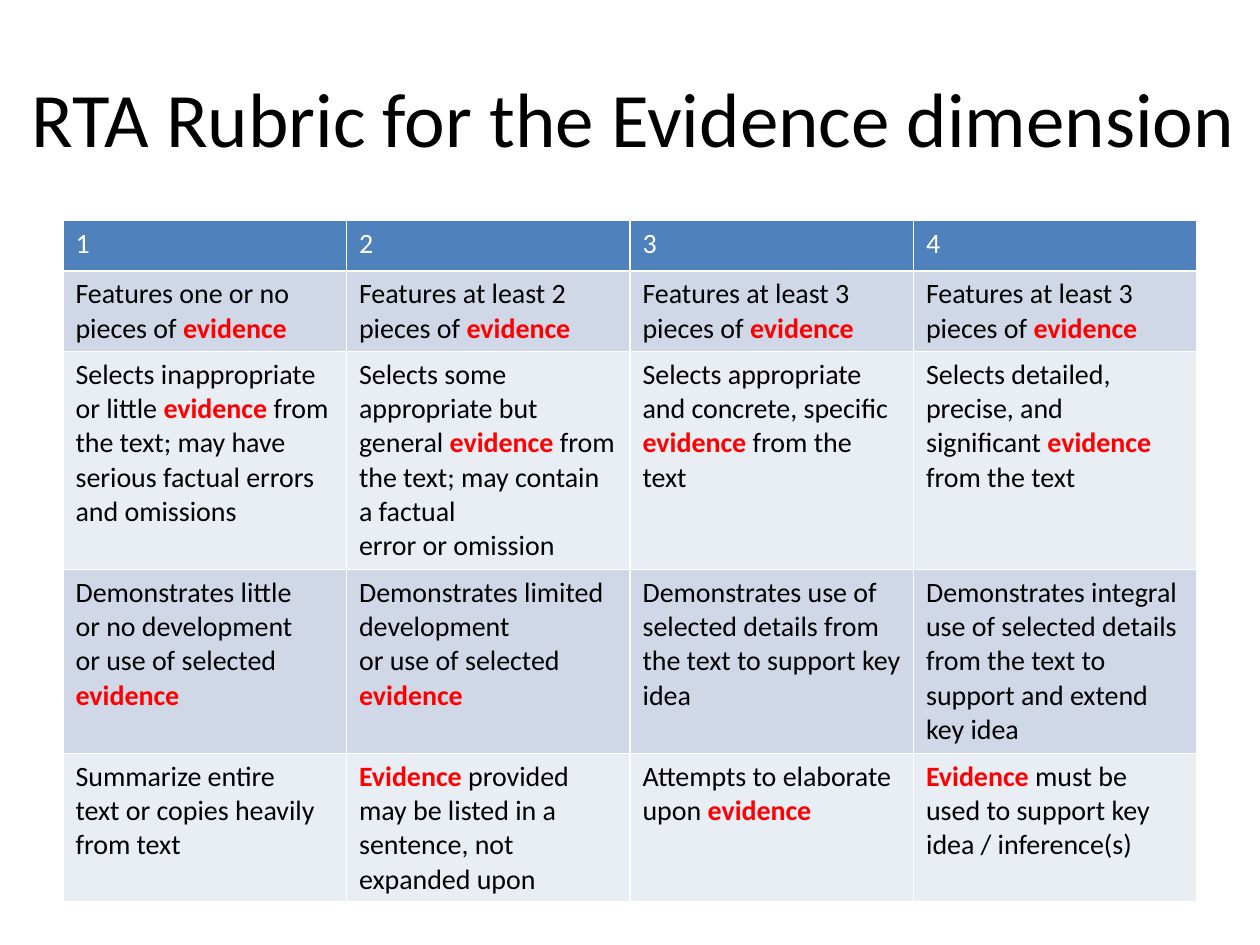
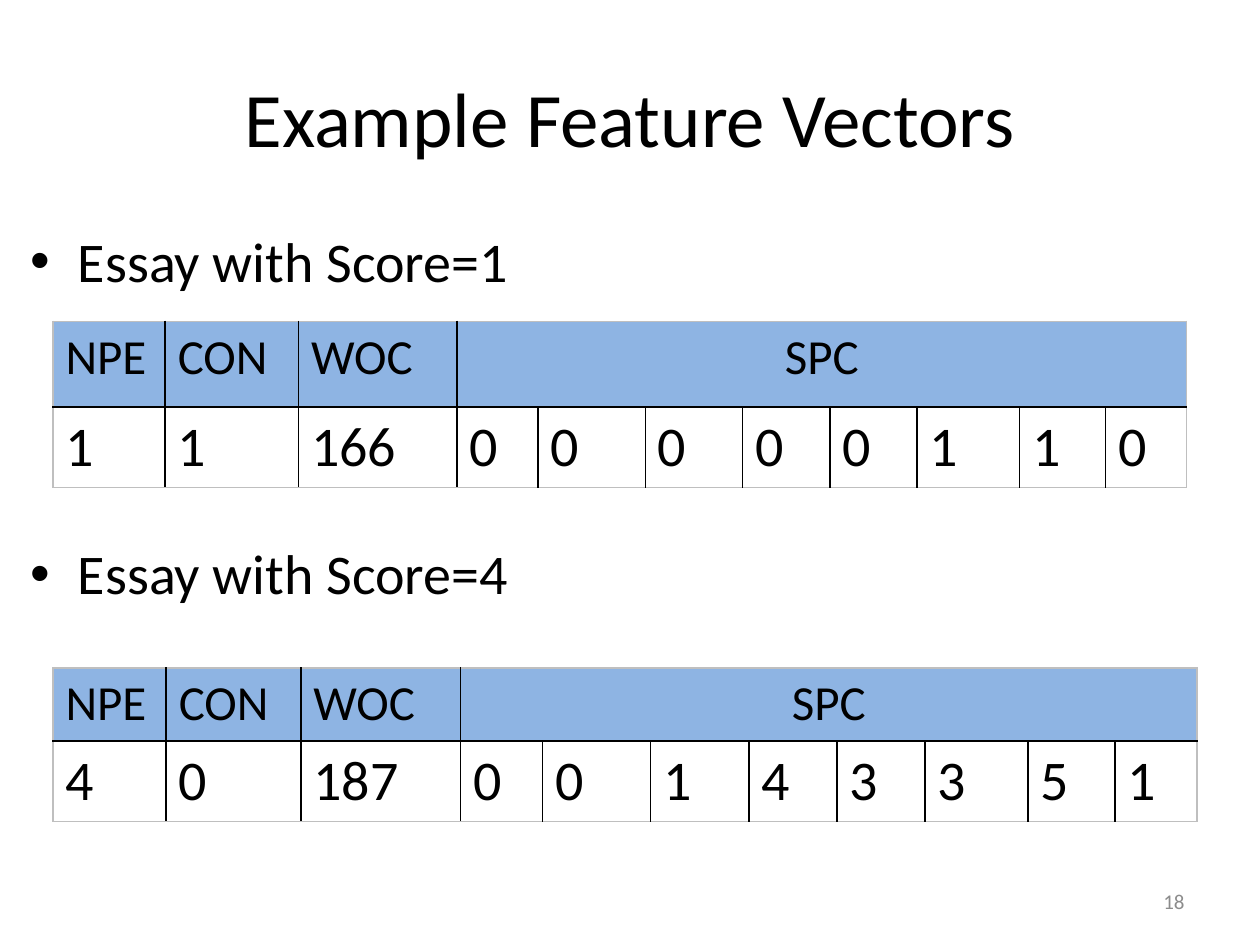
from dataclasses import dataclass

from lxml.etree import SubElement
from pptx import Presentation
from pptx.dml.color import RGBColor
from pptx.enum.text import MSO_ANCHOR, PP_ALIGN
from pptx.oxml.ns import qn
from pptx.util import Emu, Inches, Pt

SLIDE_WIDTH, SLIDE_HEIGHT = Inches(10), Inches(7.5)
GRID_COLUMNS, GRID_ROWS = 100, 75
FONT = "Calibri"
COLORS = {
    "text": "000000",
    "highlight": "FF0000",
    "footer": "8C8C8C",
    "white": "FFFFFF",
    "rubric_header": "4F81BD",
    "band_dark": "D0D8E8",
    "band_light": "E9EDF4",
    "feature_header": "8EB4E3",
    "rule": "000000",
    "frame": "BFBFBF",
}


@dataclass(frozen=True)
class Area:
    """A rectangle in grid columns and rows."""
    left: float
    top: float
    width: float
    height: float


@dataclass(frozen=True)
class TextStyle:
    size: float
    color: str = "text"
    align: PP_ALIGN = PP_ALIGN.LEFT


@dataclass(frozen=True)
class Essay:
    score: int
    area: Area
    row_heights: tuple[float, float]
    features: tuple[int, ...]


TITLE = TextStyle(44, align=PP_ALIGN.CENTER)
BULLET = TextStyle(32)
PAGE_NUMBER = TextStyle(12, "footer", PP_ALIGN.RIGHT)
RUBRIC_HEADER = TextStyle(16, "white")
RUBRIC_BODY = TextStyle(16)
FEATURE_HEADER = TextStyle(28)
FEATURE_GROUP = TextStyle(28, align=PP_ALIGN.CENTER)
FEATURE_VALUE = TextStyle(32)

# Words between asterisks are highlighted.
RUBRIC = (
    ("1", "2", "3", "4"),
    (
        "Features one or no\npieces of *evidence*",
        "Features at least 2\npieces of *evidence*",
        "Features at least 3\npieces of *evidence*",
        "Features at least 3\npieces of *evidence*",
    ),
    (
        "Selects inappropriate or little *evidence* from the text; "
        "may have serious factual errors and omissions",
        "Selects some appropriate but general *evidence* from the text; "
        "may contain a factual\nerror or omission",
        "Selects appropriate\nand concrete, specific *evidence* from the\ntext",
        "Selects detailed, precise, and significant *evidence* from the text",
    ),
    (
        "Demonstrates little\nor no development\nor use of selected\n*evidence*",
        "Demonstrates limited development\nor use of selected\n*evidence*",
        "Demonstrates use of selected details from the text to support key idea",
        "Demonstrates integral use of selected details from the text "
        "to support and extend key idea",
    ),
    (
        "Summarize entire\ntext or copies heavily from text",
        "*Evidence *provided may be listed in a sentence, not expanded upon",
        "Attempts to elaborate upon *evidence*",
        "*Evidence* must be\nused to support key\nidea / inference(s)",
    ),
)
RUBRIC_AREA = Area(5, 17.5, 90, 54.1)
RUBRIC_ROW_HEIGHTS = (4, 6.4, 17.3, 14.6, 11.8)

FEATURE_NAMES = ("NPE", "CON", "WOC", "SPC")
FEATURE_WIDTHS = (9, 10.7, 12.7, 6.5, 8.6, 7.8, 7, 7, 8.2, 6.9, 6.5)
ESSAYS = (
    Essay(1, Area(4.2, 25.5, 90, 13.2), (6.8, 6.4),
          (1, 1, 166, 0, 0, 0, 0, 0, 1, 1, 0)),
    Essay(4, Area(4.2, 53, 90.8, 12.2), (5.8, 6.4),
          (4, 0, 187, 0, 0, 1, 4, 3, 3, 5, 1)),
)


def across(columns: float) -> Emu:
    return Emu(round(SLIDE_WIDTH * columns / GRID_COLUMNS))


def down(rows: float) -> Emu:
    return Emu(round(SLIDE_HEIGHT * rows / GRID_ROWS))


def place(area: Area) -> tuple[Emu, Emu, Emu, Emu]:
    return across(area.left), down(area.top), across(area.width), down(area.height)


def rgb(name: str) -> RGBColor:
    return RGBColor.from_string(COLORS[name])


def write(frame, text: str, style: TextStyle) -> None:
    """Fill a text frame, one paragraph a line, with *marked* words highlighted."""
    frame.text = text.replace("*", "")
    for paragraph, line in zip(frame.paragraphs, text.split("\n")):
        paragraph.alignment = style.align
        paragraph.text = ""
        for index, part in enumerate(line.split("*")):
            if not part:
                continue
            marked = index % 2 == 1
            run = paragraph.add_run()
            run.text = part
            run.font.name = FONT
            run.font.size = Pt(style.size)
            run.font.bold = marked
            run.font.color.rgb = rgb("highlight" if marked else style.color)


def add_text(slide, area: Area, text: str, style: TextStyle,
             anchor: MSO_ANCHOR = MSO_ANCHOR.MIDDLE):
    frame = slide.shapes.add_textbox(*place(area)).text_frame
    frame.word_wrap = True
    frame.vertical_anchor = anchor
    write(frame, text, style)
    return frame


def add_bullet(paragraph) -> None:
    properties = paragraph._p.get_or_add_pPr()
    properties.set("marL", str(Inches(0.38)))
    properties.set("indent", str(-Inches(0.38)))
    SubElement(properties, qn("a:buFont"), typeface="Arial")
    SubElement(properties, qn("a:buChar"), char="•")


def set_borders(cell, colors: dict[str, str]) -> None:
    """Draw the sides L, R, T and B; call before the cell is filled."""
    properties = cell._tc.get_or_add_tcPr()
    for side, color in colors.items():
        line = SubElement(properties, qn(f"a:ln{side}"), w=str(Pt(1)))
        fill = SubElement(line, qn("a:solidFill"))
        SubElement(fill, qn("a:srgbClr"), val=COLORS[color])


def add_grid(slide, area: Area, widths: tuple[float, ...], heights: tuple[float, ...]):
    """Add an unstyled table whose column widths are shares of the area."""
    table = slide.shapes.add_table(len(heights), len(widths), *place(area)).table
    table.first_row = table.horz_banding = False
    for column, width in zip(table.columns, widths):
        column.width = across(area.width * width / sum(widths))
    for row, height in zip(table.rows, heights):
        row.height = down(height)
    return table


def style_cells(table, fills: tuple[str, ...], inner: str, outer: str) -> None:
    """Fill each row with its colour and rule the cells, outer edges apart."""
    last_row, last_column = len(table.rows) - 1, len(table.columns) - 1
    for row, fill in enumerate(fills):
        for column in range(last_column + 1):
            cell = table.cell(row, column)
            right = column + cell.span_width - 1 if cell.is_merge_origin else column
            at_edge = {"L": column == 0, "R": right == last_column,
                       "T": row == 0, "B": row == last_row}
            set_borders(cell, {side: outer if edge else inner
                               for side, edge in at_edge.items()})
            cell.fill.solid()
            cell.fill.fore_color.rgb = rgb(fill)


def add_rubric(slide) -> None:
    table = add_grid(slide, RUBRIC_AREA, (1,) * len(RUBRIC[0]), RUBRIC_ROW_HEIGHTS)
    bands = ("band_dark", "band_light") * 2
    style_cells(table, ("rubric_header", *bands), "white", "white")
    for row, criteria in enumerate(RUBRIC):
        style = RUBRIC_BODY if row else RUBRIC_HEADER
        for column, criterion in enumerate(criteria):
            write(table.cell(row, column).text_frame, criterion, style)


def add_features(slide, essay: Essay) -> None:
    table = add_grid(slide, essay.area, FEATURE_WIDTHS, essay.row_heights)
    group = len(FEATURE_NAMES) - 1
    table.cell(0, group).merge(table.cell(0, len(FEATURE_WIDTHS) - 1))
    style_cells(table, ("feature_header", "white"), "rule", "frame")
    for column, name in enumerate(FEATURE_NAMES):
        style = FEATURE_GROUP if column == group else FEATURE_HEADER
        write(table.cell(0, column).text_frame, name, style)
    for column, value in enumerate(essay.features):
        write(table.cell(1, column).text_frame, str(value), FEATURE_VALUE)


def add_titled_slide(deck, title: str, left: float, width: float):
    slide = deck.slides.add_slide(deck.slide_layouts[6])
    add_text(slide, Area(left, 3, width, 12.5), title, TITLE)
    return slide


def build_rubric_slide(deck) -> None:
    slide = add_titled_slide(deck, "RTA Rubric for the Evidence dimension", 1.4, 97.8)
    add_rubric(slide)


def build_vectors_slide(deck) -> None:
    slide = add_titled_slide(deck, "Example Feature Vectors", 5, 90)
    add_text(slide, Area(71.7, 69.5, 23.3, 4), "18", PAGE_NUMBER)
    headings = "\n".join(f"Essay with Score={essay.score}" for essay in ESSAYS)
    frame = add_text(slide, Area(1.4, 17.5, 97, 49.5), headings, BULLET, MSO_ANCHOR.TOP)
    frame.paragraphs[1].space_before = Pt(140)
    for paragraph in frame.paragraphs:
        add_bullet(paragraph)
    for essay in ESSAYS:
        add_features(slide, essay)


def main() -> None:
    deck = Presentation()
    deck.slide_width, deck.slide_height = SLIDE_WIDTH, SLIDE_HEIGHT
    build_rubric_slide(deck)
    build_vectors_slide(deck)
    deck.save("out.pptx")


if __name__ == "__main__":
    main()
